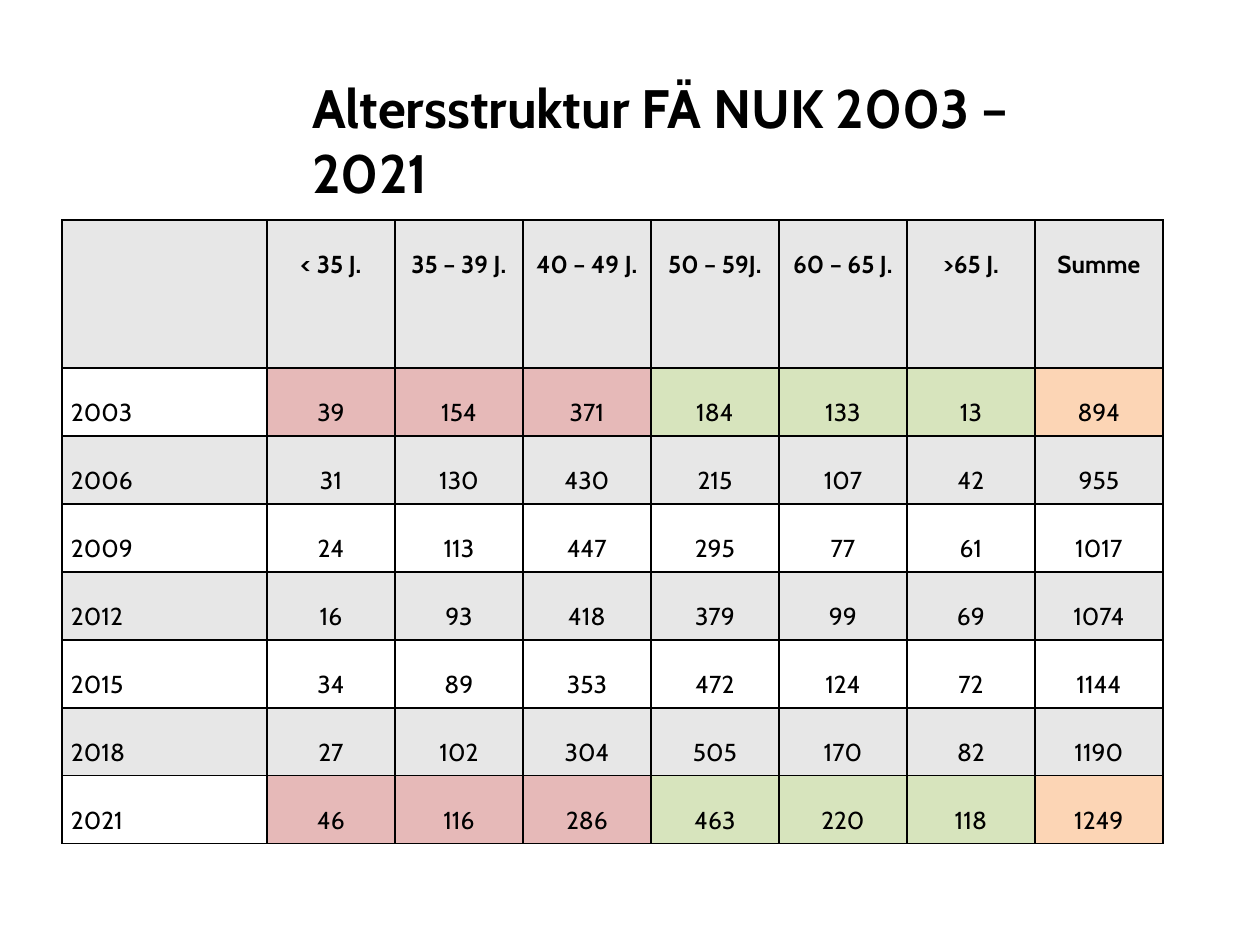
from lxml import etree
from pptx import Presentation
from pptx import util as u
from pptx.dml.color import RGBColor
from pptx.enum import text
from pptx.oxml.ns import qn

PX = 914400 // 126
COLORS = {
    "black": "000000",
    "white": "FFFFFF",
    "grey": "E7E7E7",
    "red": "E6B9B8",
    "green": "D7E4BD",
    "orange": "FCD5B5",
}
FONT = "Cabin"
ROWS = [
    ["", "< 35 J.", "35 – 39 J.", "40 – 49 J.", "50 – 59J.", "60 – 65 J.", ">65 J.", "Summe"],
    ["2003", "39", "154", "371", "184", "133", "13", "894"],
    ["2006", "31", "130", "430", "215", "107", "42", "955"],
    ["2009", "24", "113", "447", "295", "77", "61", "1017"],
    ["2012", "16", "93", "418", "379", "99", "69", "1074"],
    ["2015", "34", "89", "353", "472", "124", "72", "1144"],
    ["2018", "27", "102", "304", "505", "170", "82", "1190"],
    ["2021", "46", "116", "286", "463", "220", "118", "1249"],
]
HIGHLIGHT = ["white"] + ["red"] * 3 + ["green"] * 3 + ["orange"]


def style_font(font, size, bold):
    font.name = FONT
    font.size = u.Pt(size)
    font.bold = bold
    font.color.rgb = RGBColor.from_string(COLORS["black"])


def add_borders(cell):
    properties = cell._tc.get_or_add_tcPr()
    for side in ("lnL", "lnR", "lnT", "lnB"):
        line = etree.SubElement(properties, qn("a:" + side), w=str(u.Pt(1)))
        fill = etree.SubElement(line, qn("a:solidFill"))
        etree.SubElement(fill, qn("a:srgbClr"), val=COLORS["black"])


deck = Presentation()
deck.slide_width = u.Inches(10)
deck.slide_height = u.Inches(7.5)
page = deck.slides.add_slide(deck.slide_layouts[6])

title = page.shapes.add_textbox(300 * PX, 68 * PX, 827 * PX, 78 * PX)
title.text_frame.word_wrap = True
title.text_frame.auto_size = text.MSO_AUTO_SIZE.SHAPE_TO_FIT_TEXT
title.text_frame.text = "Altersstruktur FÄ NUK 2003 – 2021"
style_font(title.text_frame.paragraphs[0].runs[0].font, 30.9, True)

widths = [205] + [128] * 7
heights = [148] + [68] * 7
table = page.shapes.add_table(
    len(ROWS), len(widths), 62 * PX, 220 * PX, sum(widths) * PX, sum(heights) * PX
).table
table.first_row = False
table.horz_banding = False
for column, width in zip(table.columns, widths):
    column.width = width * PX
for row, height in zip(table.rows, heights):
    row.height = height * PX

for i, values in enumerate(ROWS):
    for j, value in enumerate(values):
        cell = table.cell(i, j)
        add_borders(cell)
        if i in (1, len(ROWS) - 1):
            color = HIGHLIGHT[j]
        else:
            color = "white" if i % 2 else "grey"
        cell.fill.solid()
        cell.fill.fore_color.rgb = RGBColor.from_string(COLORS[color])
        cell.margin_left = cell.margin_right = 9 * PX
        cell.margin_top = cell.margin_bottom = 0
        if value:
            para = cell.text_frame.paragraphs[0]
            para.text = value
            para.line_spacing = 2.0
            para.alignment = text.PP_ALIGN.CENTER if j else text.PP_ALIGN.LEFT
            style_font(para.runs[0].font, 14, i == 0)

deck.save("out.pptx")
